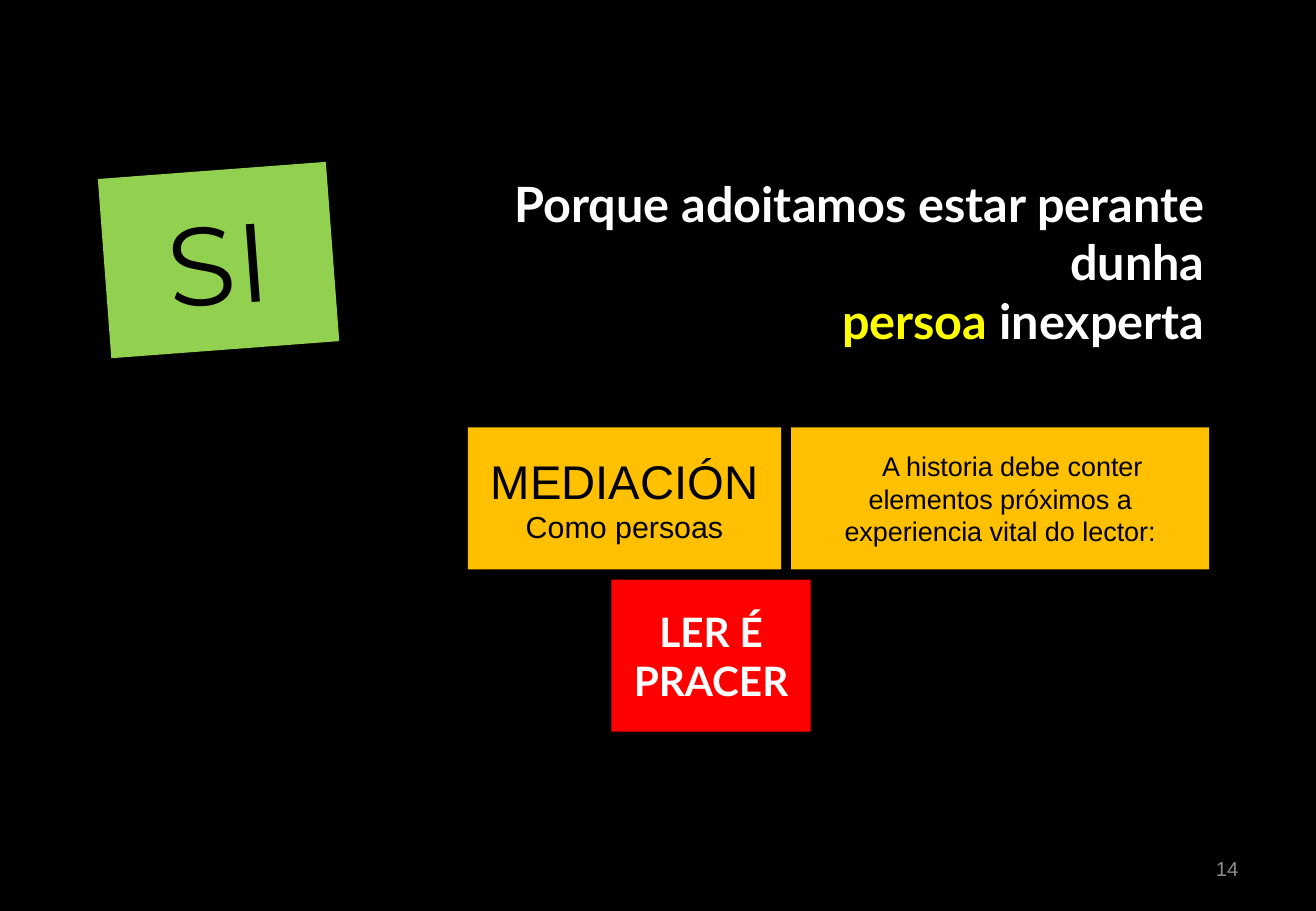
from pptx import Presentation
from pptx.dml.color import RGBColor
from pptx.enum.shapes import MSO_SHAPE
from pptx.enum.text import MSO_ANCHOR, PP_ALIGN
from pptx.util import Cm, Pt

RECTANGLE = MSO_SHAPE.RECTANGLE
TOP, MIDDLE = MSO_ANCHOR.TOP, MSO_ANCHOR.MIDDLE
CENTER, RIGHT = PP_ALIGN.CENTER, PP_ALIGN.RIGHT

BLACK, WHITE, YELLOW = "000000", "FFFFFF", "FFFF00"
GREEN, AMBER, RED, GREY = "92D050", "FFC000", "FF0000", "8C8C8C"

HEADING = {"name": "Lato", "size": Pt(28.8), "bold": True}
PAGE_NUMBER = {"name": "Arial", "size": Pt(12)}
ANSWER = {"name": "Montserrat", "size": Pt(66)}
MEDIATION = {"name": "Arial", "size": Pt(28)}
ROLE = {"name": "Arial", "size": Pt(18)}
PLEASURE = {"name": "Lato", "size": Pt(24), "bold": True}
STORY = {"name": "Arial", "size": Pt(16)}

LEFT_EDGE = 9.78
ROW_TOP, ROW_HEIGHT = 8.94, 2.97


def rgb(color):
    return RGBColor.from_string(color)


def apply_format(target, values):
    for attribute, value in values.items():
        setattr(target, attribute, value)


def add_run(paragraph, text, color, style):
    run = paragraph.add_run()
    run.text = text
    apply_format(run.font, style)
    run.font.color.rgb = rgb(color)


def add_label(slide, box, align, anchor=MIDDLE):
    label = slide.shapes.add_textbox(*map(Cm, box))
    apply_format(label.text_frame, {"word_wrap": True, "vertical_anchor": anchor})
    paragraph = label.text_frame.paragraphs[0]
    paragraph.alignment = align
    return label.text_frame, paragraph


def add_card(slide, box, fill, lines, color=BLACK, rotation=0):
    card = slide.shapes.add_shape(RECTANGLE, *map(Cm, box))
    card.rotation = rotation
    card.shadow.inherit = False
    card.fill.solid()
    card.fill.fore_color.rgb = rgb(fill)
    card.line.fill.background()
    frame = card.text_frame
    apply_format(frame, {"word_wrap": True, "vertical_anchor": MIDDLE})
    for index, (text, style) in enumerate(lines):
        paragraph = frame.add_paragraph() if index else frame.paragraphs[0]
        paragraph.alignment = CENTER
        add_run(paragraph, text, color, style)
    return frame


def add_heading(slide):
    frame, heading = add_label(slide, (LEFT_EDGE, 3.58, 15.65, 5.16), RIGHT, TOP)
    frame.margin_top = Cm(0.06)
    add_run(heading, "Porque adoitamos estar perante dunha", WHITE, HEADING)
    heading.add_line_break()
    add_run(heading, "persoa", YELLOW, HEADING)
    add_run(heading, " inexperta", WHITE, HEADING)


def indent_first_line(paragraph, indent):
    paragraph._p.get_or_add_pPr().set("indent", str(int(Cm(indent))))


def main():
    presentation = Presentation()
    apply_format(presentation, {"slide_width": Cm(27.51), "slide_height": Cm(19.05)})
    slide = presentation.slides.add_slide(presentation.slide_layouts[6])
    slide.background.fill.solid()
    slide.background.fill.fore_color.rgb = rgb(BLACK)

    add_heading(slide)
    _, page_number = add_label(slide, (19.71, 17.65, 6.43, 1.02), RIGHT)
    add_run(page_number, "14", GREY, PAGE_NUMBER)

    add_card(slide, (2.18, 3.56, 4.78, 3.76), GREEN, [("SI", ANSWER)], rotation=355.7)
    add_card(slide, (LEFT_EDGE, ROW_TOP, 6.55, ROW_HEIGHT), AMBER,
             [("MEDIACIÓN", MEDIATION), ("Como persoas", ROLE)])
    add_card(slide, (12.78, 12.12, 4.17, 3.18), RED, [("LER É PRACER", PLEASURE)], WHITE)
    story = add_card(
        slide, (16.54, ROW_TOP, 8.74, ROW_HEIGHT), AMBER,
        [("A historia debe conter elementos próximos a experiencia vital do lector:", STORY)])
    indent_first_line(story.paragraphs[0], 0.51)

    presentation.save("out.pptx")


if __name__ == "__main__":
    main()
